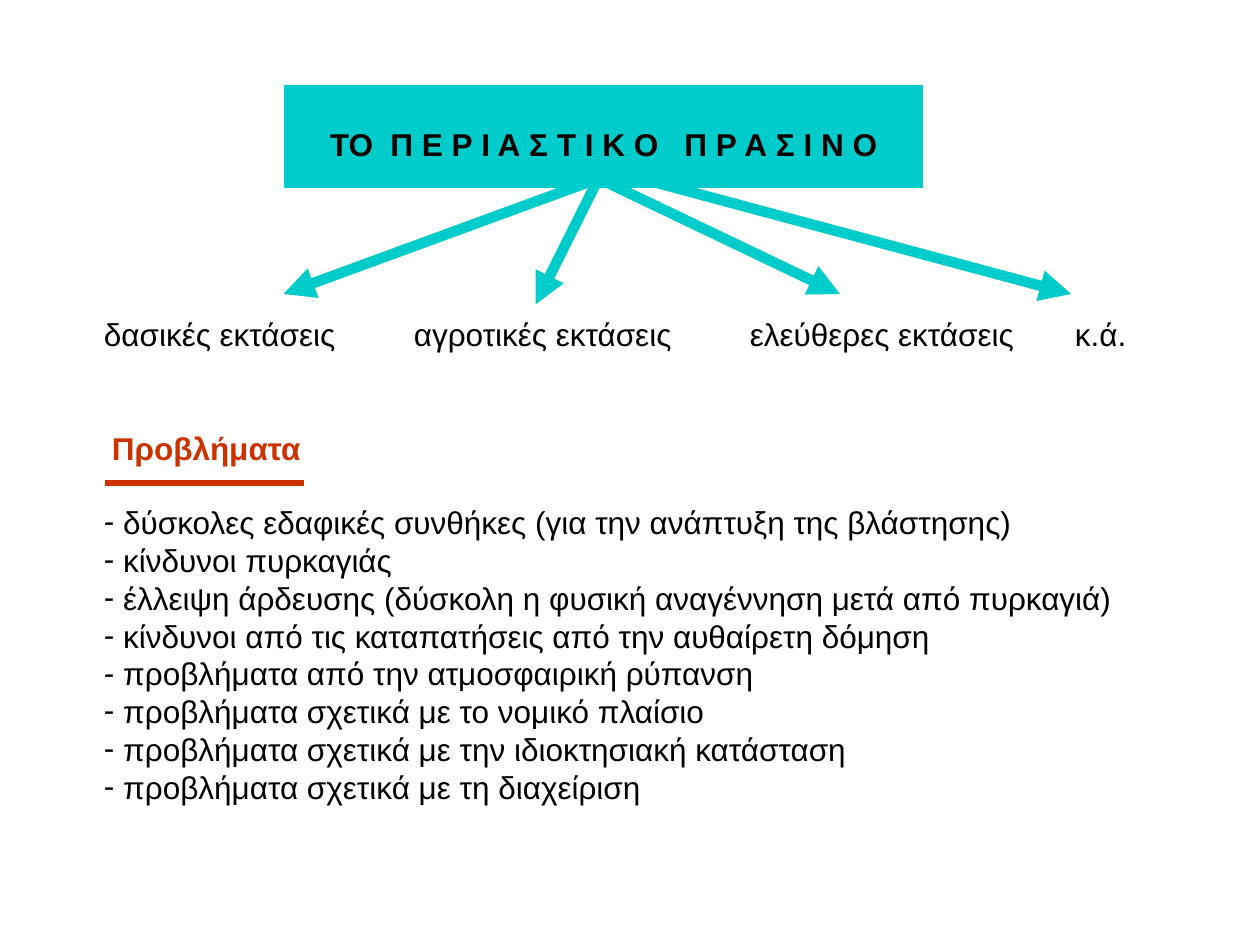
from lxml import etree
from pptx import Presentation
from pptx.dml.color import RGBColor
from pptx.enum.shapes import MSO_CONNECTOR
from pptx.enum.text import MSO_ANCHOR, MSO_AUTO_SIZE, PP_ALIGN
from pptx.oxml.ns import qn
from pptx.util import Pt

STRAIGHT = MSO_CONNECTOR.STRAIGHT
TOP, MIDDLE = MSO_ANCHOR.TOP, MSO_ANCHOR.MIDDLE
LEFT, CENTER = PP_ALIGN.LEFT, PP_ALIGN.CENTER
NO_FIT = MSO_AUTO_SIZE.NONE

THEME = {
    "font": "Arial",
    "size": Pt(18),
    "ink": RGBColor(0x00, 0x00, 0x00),
    "aqua": RGBColor(0x00, 0xCC, 0xCC),
    "rust": RGBColor(0xCC, 0x33, 0x00),
    "paper": RGBColor(0xFF, 0xFF, 0xFF),
}


def write(shape, text, box, color="ink", bold=False, align=LEFT,
          anchor=TOP, drop=0, pitch=None, bullet=None, indent=0):
    """Place a shape and fill it with one paragraph per line of text."""
    shape.left, shape.top, shape.width, shape.height = map(Pt, box)
    frame = shape.text_frame
    frame.text = text
    frame.word_wrap = True
    frame.auto_size = NO_FIT
    frame.vertical_anchor = anchor
    frame.margin_left = frame.margin_right = frame.margin_bottom = 0
    frame.margin_top = Pt(drop)
    for para in frame.paragraphs:
        para.alignment = align
        para.space_before = para.space_after = Pt(0)
        para.line_spacing = Pt(pitch) if pitch else 1.0
        font = para.runs[0].font
        font.name, font.size, font.bold = THEME["font"], THEME["size"], bold
        font.color.rgb = THEME[color]
        if bullet:
            props = para._p.get_or_add_pPr()
            props.set("marL", str(Pt(indent)))
            props.set("indent", str(-Pt(indent)))
            etree.SubElement(props, qn("a:buChar")).set("char", bullet)


def draw(start, end, color, width, arrow=False):
    """Add a straight line between two points."""
    line = slide.shapes.add_connector(STRAIGHT, *map(Pt, start + end))
    line.line.color.rgb = THEME[color]
    line.line.width = Pt(width)
    props = line.element.spPr
    if arrow:
        tail = etree.SubElement(props.find(qn("a:ln")), qn("a:tailEnd"))
        tail.set("type", "triangle")
    etree.SubElement(props, qn("a:effectLst"))


deck = Presentation()
deck.slide_width, deck.slide_height = Pt(720), Pt(540)
slide = deck.slides.add_slide(deck.slide_layouts[1])

# Title banner
title = slide.shapes.title
write(title, "ΤΟ  Π Ε Ρ Ι Α Σ Τ Ι Κ Ο   Π Ρ Α Σ Ι Ν Ο", (162, 48, 366, 60),
      bold=True, align=CENTER, anchor=MIDDLE, drop=9)
title.fill.solid()
title.fill.fore_color.rgb = THEME["aqua"]
title.line.color.rgb = THEME["paper"]
title.line.width = Pt(0.75)

# Kinds of green space: label, its left edge and width, arrow start and tip
kinds = [
    ("δασικές εκτάσεις", 59.4, 150, 342, (162, 168)),
    ("αγροτικές εκτάσεις", 236.5, 165, 342, (306, 174)),
    ("ελεύθερες εκτάσεις", 428.5, 165, 342, (480, 168)),
    ("κ.ά.", 614.3, 50, 366, (612, 168)),
]
for label, left, width, start, tip in kinds:
    box = slide.shapes.add_textbox(0, 0, 0, 0)
    write(box, label, (left, 180, width, 22))
    draw((start, 102), tip, "aqua", 6, arrow=True)

# Problems
head = slide.shapes.add_textbox(0, 0, 0, 0)
write(head, "Προβλήματα", (64, 245, 130, 22), color="rust", bold=True)
draw((60, 276), (174, 276), "rust", 3)

issues = [
    "δύσκολες εδαφικές συνθήκες (για την ανάπτυξη της βλάστησης)",
    "κίνδυνοι πυρκαγιάς",
    "έλλειψη άρδευσης (δύσκολη η φυσική αναγέννηση μετά από πυρκαγιά)",
    "κίνδυνοι από τις καταπατήσεις από την αυθαίρετη δόμηση",
    "προβλήματα από την ατμοσφαιρική ρύπανση",
    "προβλήματα σχετικά με το νομικό πλαίσιο",
    "προβλήματα σχετικά με την ιδιοκτησιακή κατάσταση",
    "προβλήματα σχετικά με τη διαχείριση",
]
write(slide.placeholders[1], "\n".join(issues), (59.4, 287.5, 620, 180),
      pitch=21.6, bullet="-", indent=11)

deck.save("out.pptx")
